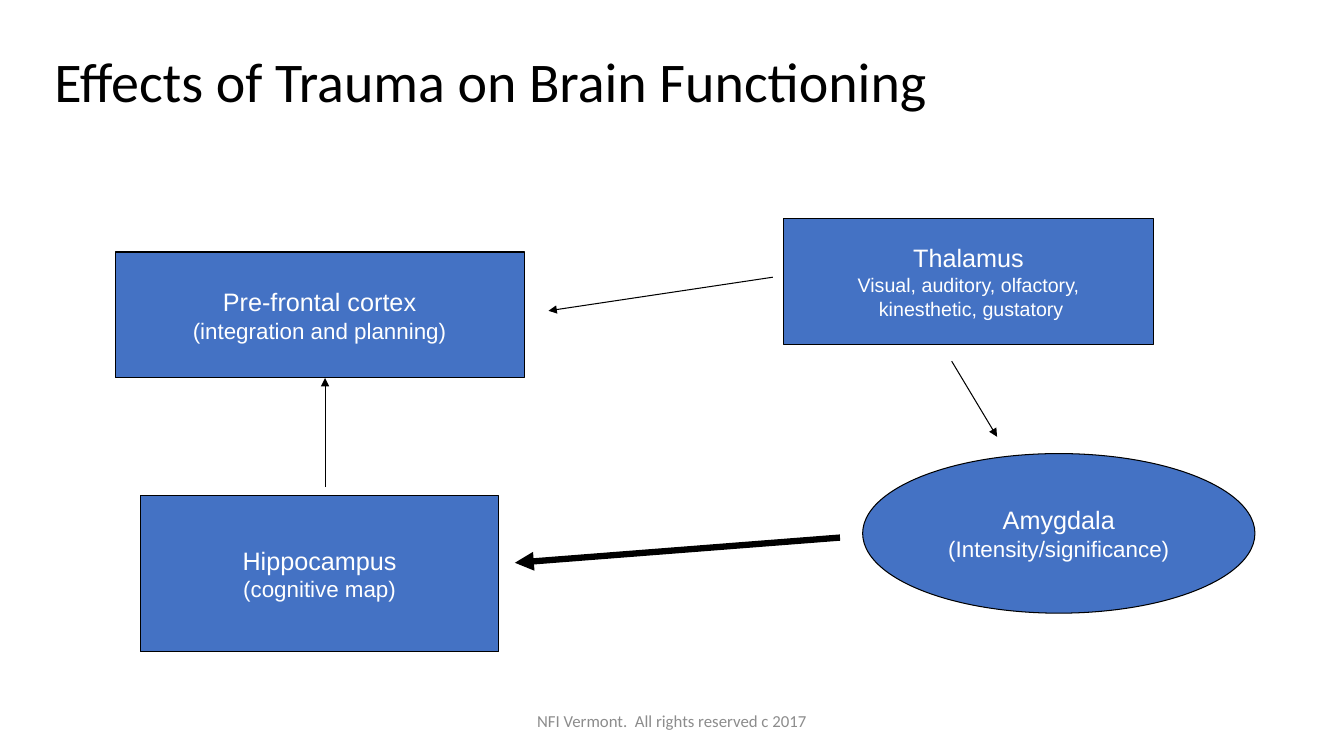
from dataclasses import dataclass

from lxml.etree import SubElement
from pptx import Presentation
from pptx.dml.color import RGBColor
from pptx.enum.shapes import MSO_CONNECTOR, MSO_SHAPE
from pptx.enum.text import MSO_ANCHOR, PP_ALIGN
from pptx.oxml.ns import qn
from pptx.slide import Slide
from pptx.text.text import TextFrame
from pptx.util import Inches, Length, Pt

BLACK = RGBColor(0x00, 0x00, 0x00)
WHITE = RGBColor(0xFF, 0xFF, 0xFF)
BLUE = RGBColor(0x44, 0x72, 0xC4)
GREY = RGBColor(0x8C, 0x8C, 0x8C)

WIDTH, HEIGHT = Inches(13.33), Inches(7.5)
COLUMNS, ROWS = 160, 90


@dataclass(frozen=True)
class Area:
    col: float
    row: float
    cols: float
    rows: float

    def emu(self) -> tuple[Length, Length, Length, Length]:
        return across(self.col), down(self.row), across(self.cols), down(self.rows)


@dataclass(frozen=True)
class Line:
    text: str
    size: float
    font: str = "Arial"
    color: RGBColor = WHITE
    align: PP_ALIGN = PP_ALIGN.CENTER
    spacing: float = 1.0


@dataclass(frozen=True)
class Region:
    area: Area
    lines: tuple[Line, ...]
    kind: MSO_SHAPE = MSO_SHAPE.RECTANGLE


@dataclass(frozen=True)
class Pathway:
    start: tuple[float, float]
    end: tuple[float, float]
    weight: float = 0.75


TITLE_AREA = Area(5.3, 2.5, 144, 15)
TITLE = Line("Effects of Trauma on Brain Functioning", 40, "Calibri", BLACK,
             PP_ALIGN.LEFT, 0.9)
FOOTER_AREA = Area(53, 83.4, 54, 4.8)
FOOTER = Line("NFI Vermont.  All rights reserved c 2017", 12, "Calibri", GREY)

REGIONS = (
    Region(Area(102.7, 54, 46.7, 19),
           (Line("Amygdala", 18), Line("(Intensity/significance)", 16)),
           MSO_SHAPE.OVAL),
    Region(Area(93.3, 26, 44, 15),
           (Line("Thalamus", 18), Line("Visual, auditory, olfactory,", 14),
            Line(" kinesthetic, gustatory", 14))),
    Region(Area(16.7, 59, 42.7, 18.6),
           (Line("Hippocampus", 18), Line("(cognitive map)", 16))),
    Region(Area(13.7, 30, 48.7, 15),
           (Line("Pre-frontal cortex", 18), Line("(integration and planning)", 16))),
)
PATHWAYS = (
    Pathway((92, 33), (65.3, 37)),
    Pathway((38.7, 58), (38.7, 45)),
    Pathway((100, 64), (61.3, 67), 4.5),
    Pathway((113.3, 43), (118.7, 52)),
)


def across(cols: float) -> Length:
    return Length(round(WIDTH * cols / COLUMNS))


def down(rows: float) -> Length:
    return Length(round(HEIGHT * rows / ROWS))


def write(tf: TextFrame, lines: tuple[Line, ...], wrap: bool) -> None:
    tf.word_wrap = wrap
    tf.vertical_anchor = MSO_ANCHOR.MIDDLE
    for i, line in enumerate(lines):
        p = tf.add_paragraph() if i else tf.paragraphs[0]
        p.alignment = line.align
        p.line_spacing = line.spacing
        r = p.add_run()
        r.text = line.text
        for name, value in {"name": line.font, "size": Pt(line.size)}.items():
            setattr(r.font, name, value)
        r.font.color.rgb = line.color


def add_label(s: Slide, area: Area, line: Line) -> None:
    write(s.shapes.add_textbox(*area.emu()).text_frame, (line,), wrap=True)


def add_region(s: Slide, region: Region) -> None:
    sp = s.shapes.add_shape(region.kind, *region.area.emu())
    sp.shadow.inherit = False
    sp.fill.solid()
    sp.fill.fore_color.rgb = BLUE
    sp.line.color.rgb = BLACK
    sp.line.width = Pt(0.75)
    write(sp.text_frame, region.lines, wrap=False)


def add_pathway(s: Slide, pathway: Pathway) -> None:
    """Draw an arrow with its head at the end point."""
    (x1, y1), (x2, y2) = pathway.start, pathway.end
    cxn = s.shapes.add_connector(MSO_CONNECTOR.STRAIGHT, across(x1), down(y1),
                                 across(x2), down(y2))
    cxn.line.color.rgb = BLACK
    cxn.line.width = Pt(pathway.weight)
    SubElement(cxn.line._get_or_add_ln(), qn("a:tailEnd"), type="triangle")
    SubElement(cxn._element.spPr, qn("a:effectLst"))


def main() -> None:
    prs = Presentation()
    prs.slide_width, prs.slide_height = WIDTH, HEIGHT
    s = prs.slides.add_slide(prs.slide_layouts[6])
    add_label(s, FOOTER_AREA, FOOTER)
    add_label(s, TITLE_AREA, TITLE)
    for region in REGIONS:
        add_region(s, region)
    for pathway in PATHWAYS:
        add_pathway(s, pathway)
    prs.save("out.pptx")


if __name__ == "__main__":
    main()
